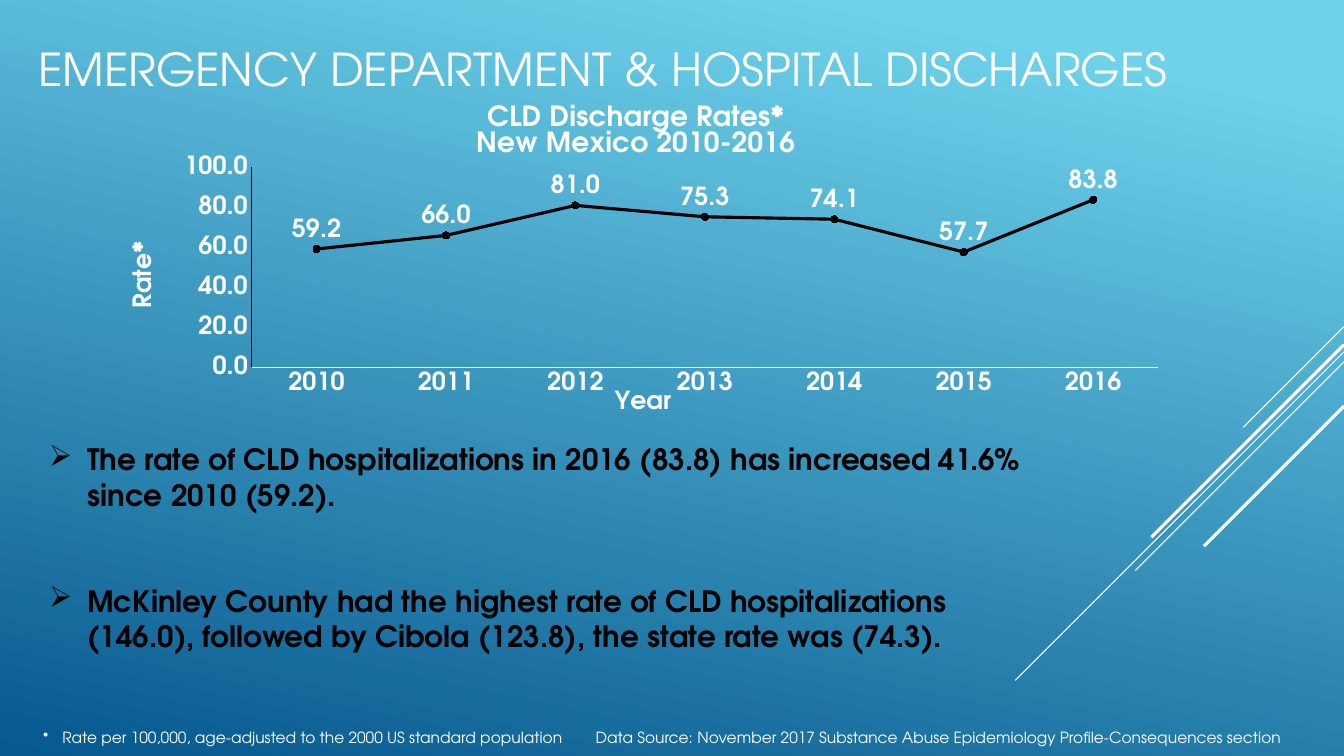
import pptx
import pptx.util
import pptx.chart.data
import pptx.dml.color
import pptx.enum.chart
import pptx.enum.shapes
import pptx.enum.text
import pptx.oxml
import pptx.oxml.ns
import lxml.etree

Inches = pptx.util.Inches
Pt = pptx.util.Pt
qn = pptx.oxml.ns.qn
FONT = "TeX Gyre Adventor"
WHITE, BLACK = "FFFFFF", "000000"
STRIPES = [
    (3.24, 1, 0.75),
    (3.49, 3.26, 0.75),
    (3.59, 2.07, 0.75),
    (3.42, 1.91, 2.25),
    (4.03, 1.39, 2.25),
]
RATES = {"2010": 59.2, "2011": 66.0, "2012": 81.0, "2013": 75.3,
         "2014": 74.1, "2015": 57.7, "2016": 83.8}
FINDINGS = [
    "The rate of CLD hospitalizations in 2016 (83.8) has increased 41.6% since 2010 (59.2).",
    "McKinley County had the highest rate of CLD hospitalizations (146.0), "
    "followed by Cibola (123.8), the state rate was (74.3).",
]
FOOTNOTE = ("Rate per 100,000, age-adjusted to the 2000 US standard population\t"
            "Data Source: November 2017 Substance Abuse Epidemiology Profile-Consequences section")


def rgb(color):
    return pptx.dml.color.RGBColor.from_string(color)


def set_font(font, size, color, bold=False):
    font.name = FONT
    font.size = Pt(size)
    font.bold = bold
    font.color.rgb = rgb(color)


def set_line(line, color, width):
    line.color.rgb = rgb(color)
    line.width = Pt(width)


def set_background(s):
    fill = s.background.fill
    fill.gradient()
    fill.gradient_angle = 258
    for stop, (position, color) in zip(fill.gradient_stops, [(0.1, "6ED2EB"), (1, "06588E")]):
        stop.position = position
        stop.color.rgb = rgb(color)


def add_stripe(s, top, run, width):
    right = 13.33
    line = s.shapes.add_connector(pptx.enum.shapes.MSO_CONNECTOR.STRAIGHT, Inches(right),
                                  Inches(top), Inches(right - run), Inches(top + run))
    set_line(line.line, WHITE, width)
    lxml.etree.SubElement(line._element.spPr, qn("a:effectLst"))


def set_title(s, text):
    sp = s.shapes.title
    sp.left, sp.top, sp.width, sp.height = map(Inches, (0.28, 0.32, 12.65, 0.72))
    tf = sp.text_frame
    tf.text = text
    tf.vertical_anchor = pptx.enum.text.MSO_ANCHOR.MIDDLE
    p = tf.paragraphs[0]
    p.alignment = pptx.enum.text.PP_ALIGN.LEFT
    set_font(p.font, 32.4, WHITE)


def add_bullets(s, box, texts, bullet, indent, size, color, bold=False, gap=0, tab=None):
    tf = s.shapes.add_textbox(*map(Inches, box)).text_frame
    tf.word_wrap = True
    for i, text in enumerate(texts):
        p = tf.paragraphs[0] if i == 0 else tf.add_paragraph()
        p.text = text
        if i:
            p.space_before = Pt(gap)
        set_font(p.font, size, color, bold)
        pPr = p._p.get_or_add_pPr()
        pPr.set("marL", str(Inches(indent)))
        pPr.set("indent", str(-Inches(indent)))
        mark = lxml.etree.Element(qn("a:buChar"), char=bullet)
        pPr.find(qn("a:defRPr")).addprevious(mark)
        if tab:
            tabs = lxml.etree.Element(qn("a:tabLst"))
            lxml.etree.SubElement(tabs, qn("a:tab"), pos=str(Inches(tab)), algn="l")
            mark.addnext(tabs)


def set_layout(parent, **values):
    for old in parent.findall(qn("c:layout")):
        parent.remove(old)
    layout = lxml.etree.Element(qn("c:layout"))
    manual = lxml.etree.SubElement(layout, qn("c:manualLayout"))
    for name, value in values.items():
        lxml.etree.SubElement(manual, qn("c:" + name), val=str(value))
    text = parent.find(qn("c:tx"))
    parent.insert(0 if text is None else parent.index(text) + 1, layout)


def set_chart_title(title, text, size, x, y):
    tf = title.text_frame
    tf.text = text
    for p in tf.paragraphs:
        set_font(p.font, size, WHITE, True)
    set_layout(title._element, xMode="edge", yMode="edge", x=x, y=y)


def style_axis(axis, title, x, y, color):
    set_chart_title(axis.axis_title, title, 18, x, y)
    axis.has_major_gridlines = False
    axis.major_tick_mark = pptx.enum.chart.XL_TICK_MARK.NONE
    set_font(axis.tick_labels.font, 18, WHITE, True)
    set_line(axis.format.line, color, 0.75)


def add_rate_chart(s):
    data = pptx.chart.data.CategoryChartData(number_format="0.0")
    data.categories = list(RATES)
    data.add_series("Series 1", list(RATES.values()))
    chart = s.shapes.add_chart(pptx.enum.chart.XL_CHART_TYPE.LINE_MARKERS,
                               *map(Inches, (1.14, 1, 10.45, 3.18)), data).chart
    set_font(chart.font, 10, WHITE)
    chart.has_legend = False
    set_chart_title(chart.chart_title, "CLD Discharge Rates*\nNew Mexico 2010-2016", 20, 0.34, 0)
    style_axis(chart.category_axis, "Year", 0.47, 0.89, WHITE)
    style_axis(chart.value_axis, "Rate*", 0.01, 0.43, BLACK)
    axis = chart.value_axis
    axis.minimum_scale, axis.maximum_scale, axis.major_unit = 0, 100, 20
    axis.tick_labels.number_format = "0.0"
    axis.tick_labels.number_format_is_linked = False

    plot_area = chart._chartSpace.find(".//" + qn("c:plotArea"))
    set_layout(plot_area, layoutTarget="inner", xMode="edge", yMode="edge",
               x=0.13, y=0.21, w=0.86, h=0.63)
    plot = chart.plots[0]
    plot.vary_by_categories = False
    series = plot.series[0]
    series.smooth = False
    set_line(series.format.line, BLACK, 2.25)
    marker = series.marker
    marker.style = pptx.enum.chart.XL_MARKER_STYLE.CIRCLE
    marker.size = 5
    marker.format.fill.solid()
    marker.format.fill.fore_color.rgb = rgb(BLACK)
    set_line(marker.format.line, BLACK, 0.75)
    labels = series.data_labels
    labels.show_value = True
    labels.position = pptx.enum.chart.XL_LABEL_POSITION.ABOVE
    labels.number_format = "0.0"
    labels.number_format_is_linked = False
    set_font(labels.font, 18, WHITE, True)


def main():
    prs = pptx.Presentation()
    prs.slide_width, prs.slide_height = Inches(13.33), Inches(7.5)
    s = prs.slides.add_slide(prs.slide_layouts[5])
    set_background(s)
    for stripe in STRIPES:
        add_stripe(s, *stripe)
    set_title(s, "EMERGENCY DEPARTMENT & HOSPITAL DISCHARGES")
    add_rate_chart(s)
    add_bullets(s, (0.39, 4.33, 9.94, 2.22), FINDINGS, "➢", 0.38, 21, BLACK, bold=True, gap=50.5)
    add_bullets(s, (0.33, 7.17, 12.54, 0.29), [FOOTNOTE], "•", 0.19, 11, WHITE, tab=5.48)
    prs.save("out.pptx")


if __name__ == "__main__":
    main()
